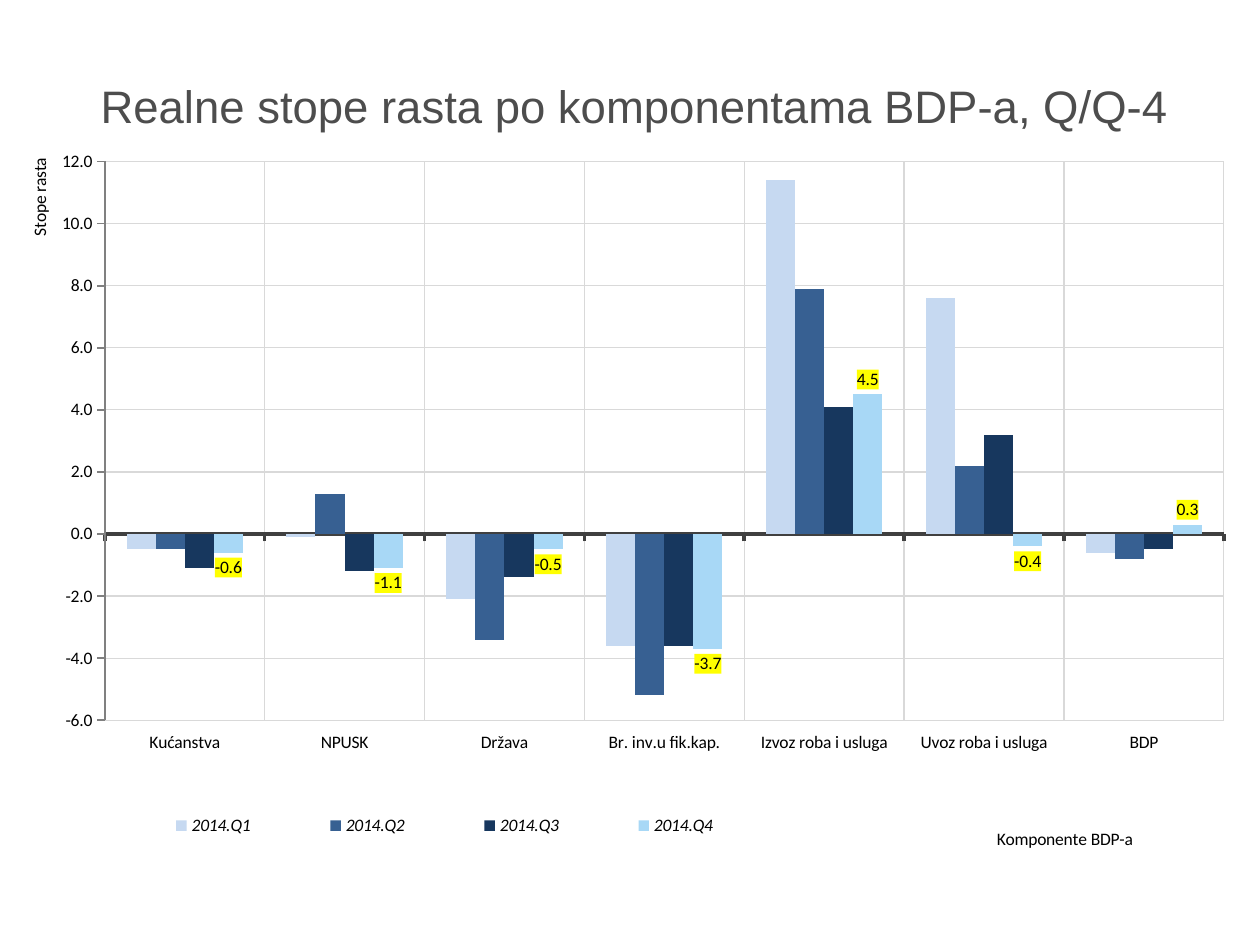
from lxml.etree import SubElement
from pptx import Presentation
from pptx.chart.data import CategoryChartData
from pptx.dml.color import RGBColor
from pptx.enum.chart import (XL_CHART_TYPE, XL_LABEL_POSITION, XL_LEGEND_POSITION,
                             XL_TICK_LABEL_POSITION, XL_TICK_MARK)
from pptx.enum.text import MSO_ANCHOR, PP_ALIGN
from pptx.oxml import parse_xml
from pptx.oxml.ns import nsdecls, qn
from pptx.util import Inches, Pt

BLACK = RGBColor(0x00, 0x00, 0x00)
TITLE_GREY = RGBColor(0x4D, 0x4D, 0x4D)
GRID_GREY = RGBColor(0xD9, 0xD9, 0xD9)
AXIS_GREY = RGBColor(0x80, 0x80, 0x80)
ZERO_LINE = RGBColor(0x40, 0x40, 0x40)
LABEL_YELLOW = RGBColor(0xFF, 0xFF, 0x00)

CATEGORIES = ["Kućanstva", "NPUSK", "Država", "Br. inv.u fik.kap.",
              "Izvoz roba i usluga", "Uvoz roba i usluga", "BDP"]
SERIES = [
    ("2014.Q1", RGBColor(0xC6, 0xD9, 0xF1), [-0.5, -0.1, -2.1, -3.6, 11.4, 7.6, -0.6]),
    ("2014.Q2", RGBColor(0x37, 0x60, 0x92), [-0.5, 1.3, -3.4, -5.2, 7.9, 2.2, -0.8]),
    ("2014.Q3", RGBColor(0x17, 0x37, 0x5E), [-1.1, -1.2, -1.4, -3.6, 4.1, 3.2, -0.5]),
    ("2014.Q4", RGBColor(0xA8, 0xD8, 0xF6), [-0.6, -1.1, -0.5, -3.7, 4.5, -0.4, 0.3]),
]


def set_font(font, size=10, name="Calibri", color=BLACK, bold=False, italic=False):
    font.size, font.name = Pt(size), name
    font.bold, font.italic = bold, italic
    font.color.rgb = color


def write_text(tf, text, align=PP_ALIGN.CENTER, **style):
    p = tf.paragraphs[0]
    p.alignment = align
    r = p.add_run()
    r.text = text
    set_font(r.font, **style)


def set_line(line, color, width):
    line.color.rgb = color
    line.width = Pt(width)


def set_layout(parent, index, inner=False, **shares):
    """Place a chart part by shares (x, y, w, h) of the chart's size."""
    for old in parent.findall(qn("c:layout")):
        parent.remove(old)
    layout = parse_xml(f"<c:layout {nsdecls('c')}/>")
    manual = SubElement(layout, qn("c:manualLayout"))
    if inner:
        SubElement(manual, qn("c:layoutTarget")).set("val", "inner")
    for key in ("x", "y"):
        SubElement(manual, qn(f"c:{key}Mode")).set("val", "edge")
    for key, share in shares.items():
        SubElement(manual, qn(f"c:{key}")).set("val", str(share))
    parent.insert(index, layout)


def add_title(s, box, text):
    sp = s.shapes.title
    sp.left, sp.top, sp.width, sp.height = box
    tf = sp.text_frame
    tf.word_wrap = True
    tf.vertical_anchor = MSO_ANCHOR.MIDDLE
    write_text(tf, text, size=26, name="Arial", color=TITLE_GREY)


def format_axis(axis, title, line_color, line_width, x, y):
    axis.has_major_gridlines = True
    set_line(axis.major_gridlines.format.line, GRID_GREY, 0.75)
    set_line(axis.format.line, line_color, line_width)
    axis.major_tick_mark = XL_TICK_MARK.OUTSIDE
    axis.minor_tick_mark = XL_TICK_MARK.NONE
    axis.tick_label_position = XL_TICK_LABEL_POSITION.LOW
    set_font(axis.tick_labels.font)
    write_text(axis.axis_title.text_frame, title)
    set_layout(axis.axis_title.element, 1, x=x, y=y)


def add_growth_chart(s, box):
    data = CategoryChartData(number_format="0.0")
    data.categories = CATEGORIES
    for name, _, values in SERIES:
        data.add_series(name, values)
    chart = s.shapes.add_chart(XL_CHART_TYPE.COLUMN_CLUSTERED, *box, data).chart
    chart.has_title = False
    set_font(chart.font)

    # Columns
    plot = chart.plots[0]
    plot.gap_width, plot.overlap = 150, 0
    plot.vary_by_categories = False
    for series, (_, color, _) in zip(plot.series, SERIES):
        series.format.fill.solid()
        series.format.fill.fore_color.rgb = color
        series.invert_if_negative = False

    # Highlighted values of the latest quarter
    labels = plot.series[-1].data_labels
    labels.show_value = True
    labels.number_format, labels.number_format_is_linked = "0.0", False
    labels.position = XL_LABEL_POSITION.OUTSIDE_END
    set_font(labels.font)
    label_text = chart.element.xpath(".//c:ser/c:dLbls/c:txPr")[0]
    label_text.addprevious(parse_xml(
        f"<c:spPr {nsdecls('c', 'a')}><a:solidFill>"
        f"<a:srgbClr val='{LABEL_YELLOW}'/></a:solidFill></c:spPr>"))

    # Axes
    format_axis(chart.category_axis, "Komponente BDP-a", ZERO_LINE, 2, x=0.786, y=0.948)
    value_axis = chart.value_axis
    format_axis(value_axis, "Stope rasta", AXIS_GREY, 1, x=0.008, y=0.052)
    value_axis.minimum_scale, value_axis.maximum_scale = -6, 12
    value_axis.major_unit = 2
    value_axis.tick_labels.number_format = "0.0"
    value_axis.tick_labels.number_format_is_linked = False
    body = value_axis.axis_title.element.xpath(".//a:bodyPr")[0]
    body.set("rot", "-5400000")
    body.set("vert", "horz")

    # Legend and plot area
    chart.has_legend = True
    chart.legend.position = XL_LEGEND_POSITION.RIGHT
    chart.legend.include_in_layout = False
    set_font(chart.legend.font, italic=True)
    set_layout(chart.element.xpath(".//c:legend")[0], 1, x=0.07, y=0.93, w=0.55, h=0.04)
    set_layout(chart.element.xpath(".//c:plotArea")[0], 0, inner=True,
               x=0.072, y=0.061, w=0.899, h=0.748)


def main():
    prs = Presentation()
    prs.slide_width, prs.slide_height = Inches(10), Inches(7.5)
    s = prs.slides.add_slide(prs.slide_layouts[0])
    subtitle = s.placeholders[1].element
    subtitle.getparent().remove(subtitle)
    add_title(s, [Inches(v) for v in (0.51, 0.52, 9.06, 0.63)],
              "Realne stope rasta po komponentama BDP-a, Q/Q-4")
    add_growth_chart(s, [Inches(v) for v in (0.12, 0.92, 9.88, 5.93)])
    prs.save("out.pptx")


if __name__ == "__main__":
    main()
